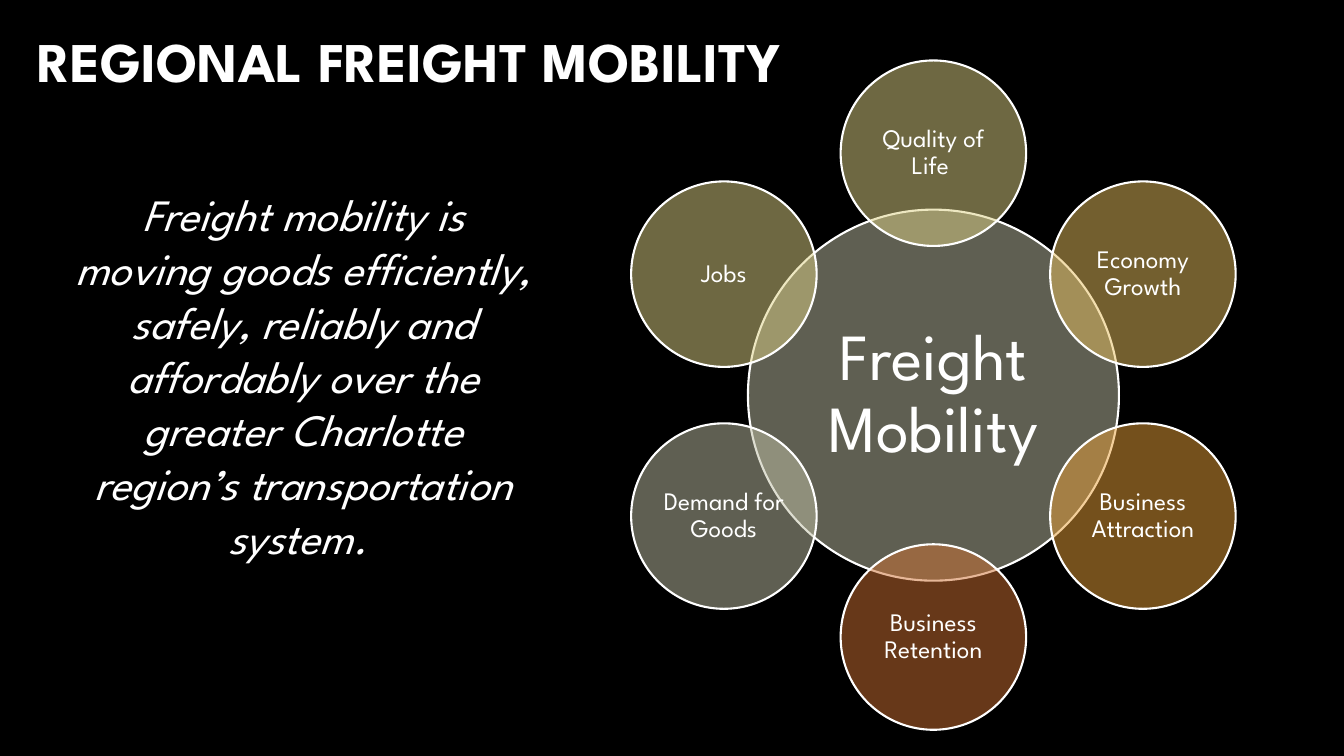
from math import cos, radians, sin

from lxml.etree import SubElement
from pptx import Presentation
from pptx.dml.color import RGBColor
from pptx.enum.shapes import MSO_SHAPE
from pptx.enum.text import MSO_ANCHOR, MSO_AUTO_SIZE, PP_ALIGN
from pptx.oxml.ns import qn
from pptx.util import Pt

FONT = "League Spartan"
WHITE = "FFFFFF"
HUB_X, HUB_Y = 666.75, 282.25
HUB_DIAMETER = 265
BENEFIT_DIAMETER = HUB_DIAMETER / 2
ORBIT_RADIUS = 172.8
TITLE = "REGIONAL FREIGHT MOBILITY"
DEFINITION = ("Freight mobility is moving goods efficiently, safely, reliably and "
              "affordably over the greater Charlotte region’s transportation system. ")
# Clockwise from the top
BENEFITS = [
    ("Quality of Life ", "DCD084"),
    ("Economy Growth", "E7BF5F"),
    ("Business Attraction", "E9A039"),
    ("Business Retention", "CF7133"),
    ("Demand for Goods", "BFBFA5"),
    ("Jobs", "DCD084"),
]


def color(hex_value):
    return RGBColor.from_string(hex_value)


def set_all(target, values):
    for name, value in values.items():
        setattr(target, name, value)


def write(shape, text, size, align, anchor, inset=None, spacing=1.0, **font):
    """Fill a shape with one formatted paragraph."""
    frame = shape.text_frame
    frame.text = text
    set_all(frame, {"word_wrap": True, "auto_size": MSO_AUTO_SIZE.NONE,
                    "vertical_anchor": anchor})
    if inset is not None:
        sides = ("left", "top", "right", "bottom")
        set_all(frame, {f"margin_{side}": Pt(inset) for side in sides})
    paragraph = frame.paragraphs[0]
    set_all(paragraph, {"alignment": align, "line_spacing": spacing,
                        "space_before": Pt(0)})
    run_font = paragraph.runs[0].font
    set_all(run_font, {"name": FONT, "size": Pt(size), **font})
    run_font.color.rgb = color(WHITE)


def place(shape, left, top, width, height):
    set_all(shape, {"left": Pt(left), "top": Pt(top),
                    "width": Pt(width), "height": Pt(height)})


def remove_bullet(paragraph):
    properties = paragraph._p.get_or_add_pPr()
    properties.set("marL", "0")
    properties.set("indent", "0")
    SubElement(properties, qn("a:buNone"))


def add_circle(slide, center_x, center_y, diameter, fill, text, size, inset):
    """Add a half-transparent labelled circle around a centre point."""
    circle = slide.shapes.add_shape(
        MSO_SHAPE.OVAL, Pt(center_x - diameter / 2), Pt(center_y - diameter / 2),
        Pt(diameter), Pt(diameter))
    circle.shadow.inherit = False
    circle.fill.solid()
    circle.fill.fore_color.rgb = color(fill)
    fill_color = circle.fill._xPr.find(qn("a:solidFill"))[0]
    SubElement(fill_color, qn("a:alpha"), val="50000")
    circle.line.color.rgb = color(WHITE)
    circle.line.width = Pt(1.5)
    write(circle, text, size, PP_ALIGN.CENTER, MSO_ANCHOR.MIDDLE, inset, 0.9)


def main():
    deck = Presentation()
    set_all(deck, {"slide_width": Pt(960), "slide_height": Pt(540)})
    slide = deck.slides.add_slide(deck.slide_layouts[1])
    slide.background.fill.solid()
    slide.background.fill.fore_color.rgb = color("000000")

    # Title
    title = slide.shapes.title
    place(title, 19.5, 13, 842, 60)
    write(title, TITLE, 40, PP_ALIGN.LEFT, MSO_ANCHOR.MIDDLE, bold=True)

    # Hub with its benefits in orbit
    add_circle(slide, HUB_X, HUB_Y, HUB_DIAMETER, "BFBFA5", "Freight Mobility", 47, 5)
    for index, (benefit, fill) in enumerate(BENEFITS):
        angle = radians(index * 360 / len(BENEFITS))
        add_circle(slide, HUB_X + ORBIT_RADIUS * sin(angle),
                   HUB_Y - ORBIT_RADIUS * cos(angle),
                   BENEFIT_DIAMETER, fill, benefit, 18, 2)

    # Definition
    definition = slide.placeholders[1]
    place(definition, 45.5, 130, 342.5, 356)
    write(definition, DEFINITION, 32, PP_ALIGN.CENTER, MSO_ANCHOR.TOP, italic=True)
    remove_bullet(definition.text_frame.paragraphs[0])

    deck.save("out.pptx")


if __name__ == "__main__":
    main()
